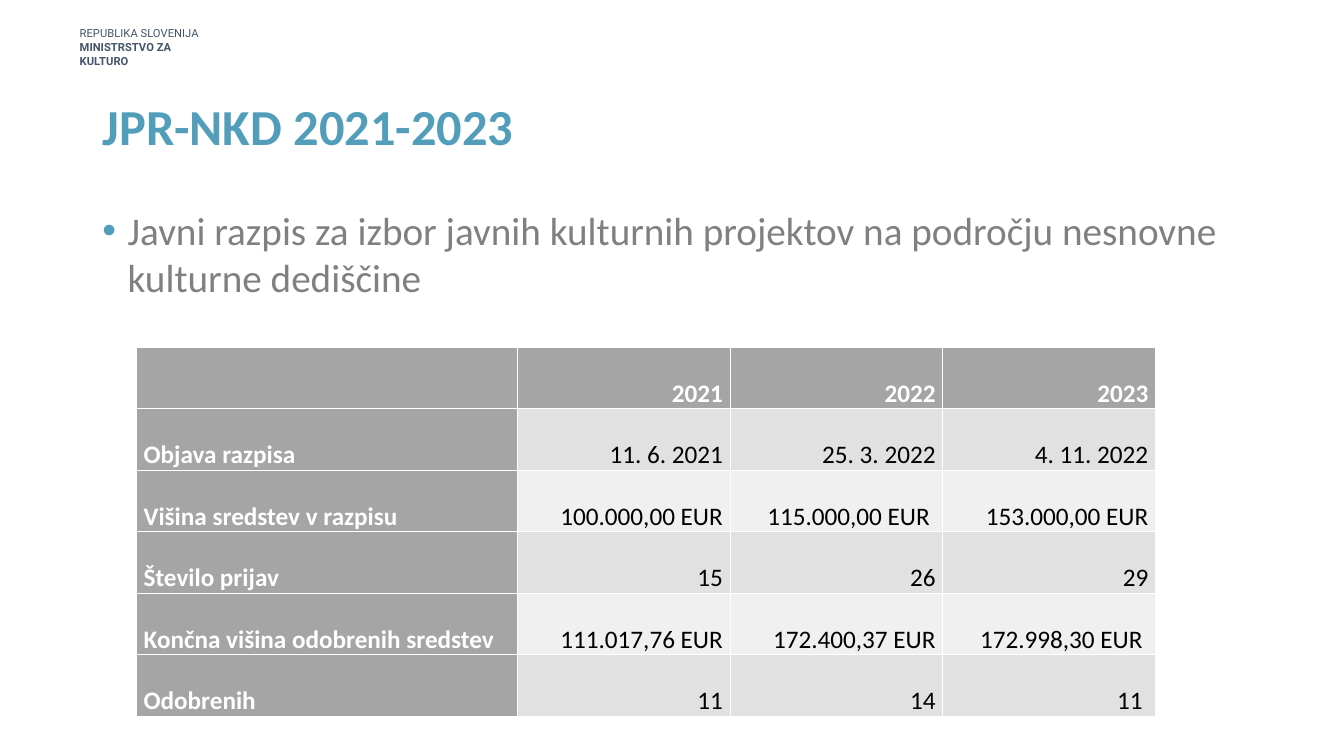
from lxml import etree
from pptx import Presentation
from pptx.dml.color import RGBColor
from pptx.enum import text
from pptx.oxml import ns
from pptx.util import Cm, Pt

WHITE = RGBColor(0xFF, 0xFF, 0xFF)
BLACK = RGBColor(0, 0, 0)
NAVY = RGBColor(0x44, 0x54, 0x6A)
TEAL = RGBColor(0x52, 0x9D, 0xBA)
GREY = RGBColor(0x80, 0x80, 0x80)
HEADER = RGBColor(0xA5, 0xA5, 0xA5)
BANDS = (RGBColor(0xE1, 0xE1, 0xE1), RGBColor(0xF0, 0xF0, 0xF0))

CALLS = [
    ["", "2021", "2022", "2023"],
    ["Objava razpisa", "11. 6. 2021", "25. 3. 2022", "4. 11. 2022"],
    ["Višina sredstev v razpisu", "100.000,00 EUR", "115.000,00 EUR ", "153.000,00 EUR"],
    ["Število prijav", "15", "26", "29"],
    ["Končna višina odobrenih sredstev", "111.017,76 EUR", "172.400,37 EUR", "172.998,30 EUR "],
    ["Odobrenih", "11", "14", "11 "],
]


def style(p, size, color, bold=False, name="Calibri"):
    """Format every run of a paragraph."""
    for r in p.runs:
        r.font.name = name
        r.font.size = Pt(size)
        r.font.bold = bold
        r.font.color.rgb = color


def add_ministry(slide, left, top, width, height):
    """Place the ministry name in the given box."""
    tf = slide.shapes.add_textbox(left, top, width, height).text_frame
    tf.word_wrap = True
    tf.margin_left = tf.margin_right = tf.margin_top = tf.margin_bottom = 0
    tf.text = "REPUBLIKA SLOVENIJA\nMINISTRSTVO ZA KULTURO"
    for p, bold in zip(tf.paragraphs, (False, True)):
        p.line_spacing = 1.05
        style(p, 8, NAVY, bold, "Roboto")


def add_title(slide, left, top, width, height):
    """Move and format the title placeholder."""
    sp = slide.shapes.title
    sp.left, sp.top, sp.width, sp.height = left, top, width, height
    tf = sp.text_frame
    tf.text = "JPR-NKD 2021-2023"
    tf.vertical_anchor = text.MSO_ANCHOR.MIDDLE
    p = tf.paragraphs[0]
    p.alignment = text.PP_ALIGN.LEFT
    p.line_spacing = 0.9
    style(p, 36, TEAL, True)


def add_description(slide, left, top, width, height):
    """Place the bulleted description of the call."""
    tf = slide.shapes.add_textbox(left, top, width, height).text_frame
    tf.word_wrap = True
    tf.text = ("Javni razpis za izbor javnih kulturnih projektov "
               "na področju nesnovne kulturne dediščine")
    p = tf.paragraphs[0]
    pPr = p._p.get_or_add_pPr()
    pPr.set("marL", str(Cm(0.64)))
    pPr.set("indent", str(-Cm(0.64)))
    color = etree.SubElement(pPr, ns.qn("a:buClr"))
    etree.SubElement(color, ns.qn("a:srgbClr"), val=str(TEAL))
    etree.SubElement(pPr, ns.qn("a:buFont"), typeface="Arial")
    etree.SubElement(pPr, ns.qn("a:buChar"), char="•")
    style(p, 28, GREY)


def add_calls_table(slide, left, top, width, height):
    """Place the table of calls by year."""
    rows, cols = len(CALLS), len(CALLS[0])
    table = slide.shapes.add_table(rows, cols, left, top, width, height).table
    label_width = Cm(9.6)
    table.columns[0].width = label_width
    for j in range(1, cols):
        table.columns[j].width = (width - label_width) // (cols - 1)
    for i, values in enumerate(CALLS):
        for j, value in enumerate(values):
            cell = table.cell(i, j)
            heading = i == 0 or j == 0
            cell.fill.solid()
            cell.fill.fore_color.rgb = HEADER if heading else BANDS[(i - 1) % 2]
            cell.margin_left = cell.margin_right = Cm(0.18)
            cell.margin_top = cell.margin_bottom = 0
            cell.text = value
            p = cell.text_frame.paragraphs[0]
            p.alignment = text.PP_ALIGN.RIGHT if j else text.PP_ALIGN.LEFT
            p.line_spacing = 2.0
            p.space_after = Pt(6)
            style(p, 18, WHITE if heading else BLACK, heading)


def main():
    """Build the slide and save it."""
    prs = Presentation()
    prs.slide_width, prs.slide_height = Cm(33.87), Cm(19.05)
    slide = prs.slides.add_slide(prs.slide_layouts[5])
    add_ministry(slide, Cm(2.01), Cm(0.64), Cm(3.45), Cm(0.69))
    add_title(slide, Cm(2.33), Cm(1.83), Cm(29.21), Cm(2.87))
    add_description(slide, Cm(2.33), Cm(5.08), Cm(29.21), Cm(12.09))
    add_calls_table(slide, Cm(3.44), Cm(8.75), Cm(25.68), Cm(9.3))
    prs.save("out.pptx")


if __name__ == "__main__":
    main()
